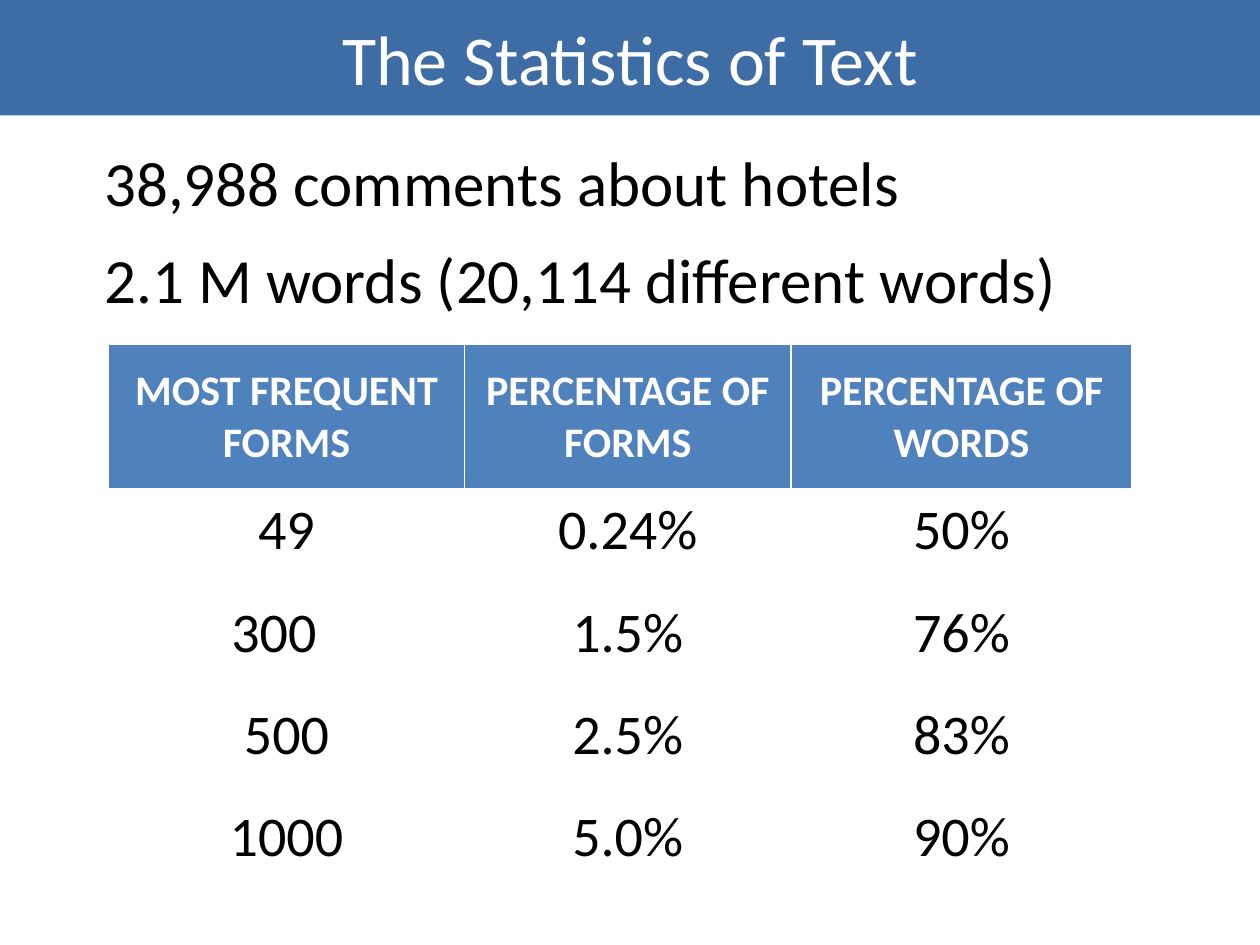
from lxml import etree
from pptx import Presentation
from pptx.dml.color import RGBColor
from pptx.enum.shapes import MSO_SHAPE
from pptx.enum.text import MSO_ANCHOR, PP_ALIGN
from pptx.oxml.ns import qn
from pptx.util import Pt

CENTER, LEFT = PP_ALIGN.CENTER, PP_ALIGN.LEFT
TOP, MIDDLE = MSO_ANCHOR.TOP, MSO_ANCHOR.MIDDLE
FONT = "Calibri"
WHITE, BLACK, BANNER_BLUE, HEADER_BLUE = "FFFFFF", "000000", "3E6CA4", "4F81BD"

TITLE = "The Statistics of Text"
FACTS = ["38,988 comments about hotels", "2.1 M words (20,114 different words)"]
HEADERS = ["MOST FREQUENT FORMS", "PERCENTAGE OF FORMS", "PERCENTAGE OF WORDS"]
FREQUENCIES = [
    ("49", "0.24%", "50%"),
    ("300", "1.5%", "76%"),
    ("500", "2.5%", "83%"),
    ("1000", "5.0%", "90%"),
]
COLUMN_WIDTHS = [203.5, 186.5, 195]
HEADER_HEIGHT, ROW_HEIGHT = 83.5, 58.5
SHIFTED_LEFT = {"300": 14.4}  # extra right margin


def rgb(value):
    return RGBColor.from_string(value)


def write(frame, lines, size, color=BLACK, bold=False, align=LEFT,
          anchor=TOP, before=0, margin=0, indent=0):
    frame.word_wrap = True
    frame.vertical_anchor = anchor
    for i, line in enumerate(lines):
        paragraph = frame.add_paragraph() if i else frame.paragraphs[0]
        paragraph.alignment = align
        paragraph.space_before = Pt(before)
        if margin:
            properties = paragraph._p.get_or_add_pPr()
            properties.set("marL", str(Pt(margin)))
            properties.set("indent", str(Pt(indent)))
        run = paragraph.add_run()
        run.text = line
        font = run.font
        font.name, font.size, font.bold = FONT, Pt(size), bold
        font.color.rgb = rgb(color)


def add_borders(cell, color, widths):
    properties = cell._tc.get_or_add_tcPr()
    for side, width in widths.items():
        line = etree.SubElement(properties, qn(f"a:ln{side}"), w=str(Pt(width)))
        fill = etree.SubElement(line, qn("a:solidFill"))
        etree.SubElement(fill, qn("a:srgbClr"), val=color)


presentation = Presentation()
presentation.slide_width, presentation.slide_height = Pt(720), Pt(540)
slide = presentation.slides.add_slide(presentation.slide_layouts[6])

banner = slide.shapes.add_shape(MSO_SHAPE.RECTANGLE, 0, 0, Pt(720), Pt(66))
banner.shadow.inherit = False
banner.fill.solid()
banner.fill.fore_color.rgb = rgb(BANNER_BLUE)
banner.line.fill.background()
write(banner.text_frame, [TITLE], 40, color=WHITE, align=CENTER, anchor=MIDDLE)

facts = slide.shapes.add_textbox(Pt(16.5), Pt(78.5), Pt(661), Pt(163))
write(facts.text_frame, FACTS, 36, before=12, margin=72, indent=-36)

rows = [HEADERS, *FREQUENCIES]
table = slide.shapes.add_table(
    len(rows), len(HEADERS), Pt(62), Pt(196.7), Pt(sum(COLUMN_WIDTHS)),
    Pt(HEADER_HEIGHT + ROW_HEIGHT * len(FREQUENCIES))).table
table.horz_banding = False
for column, width in zip(table.columns, COLUMN_WIDTHS):
    column.width = Pt(width)
for r, values in enumerate(rows):
    is_header = r == 0
    table.rows[r].height = Pt(HEADER_HEIGHT if is_header else ROW_HEIGHT)
    for c, value in enumerate(values):
        cell = table.cell(r, c)
        add_borders(cell, WHITE, {"L": 1, "R": 1, "T": 3 if r == 1 else 1,
                                  "B": 3 if is_header else 1})
        if is_header:
            cell.fill.solid()
            cell.fill.fore_color.rgb = rgb(HEADER_BLUE)
            write(cell.text_frame, [value], 24, color=WHITE, bold=True, align=CENTER)
            cell.vertical_anchor = MIDDLE
        else:
            cell.fill.background()
            write(cell.text_frame, [value], 32, align=CENTER)
            cell.margin_right = Pt(7.2 + SHIFTED_LEFT.get(value, 0))

presentation.save("out.pptx")
